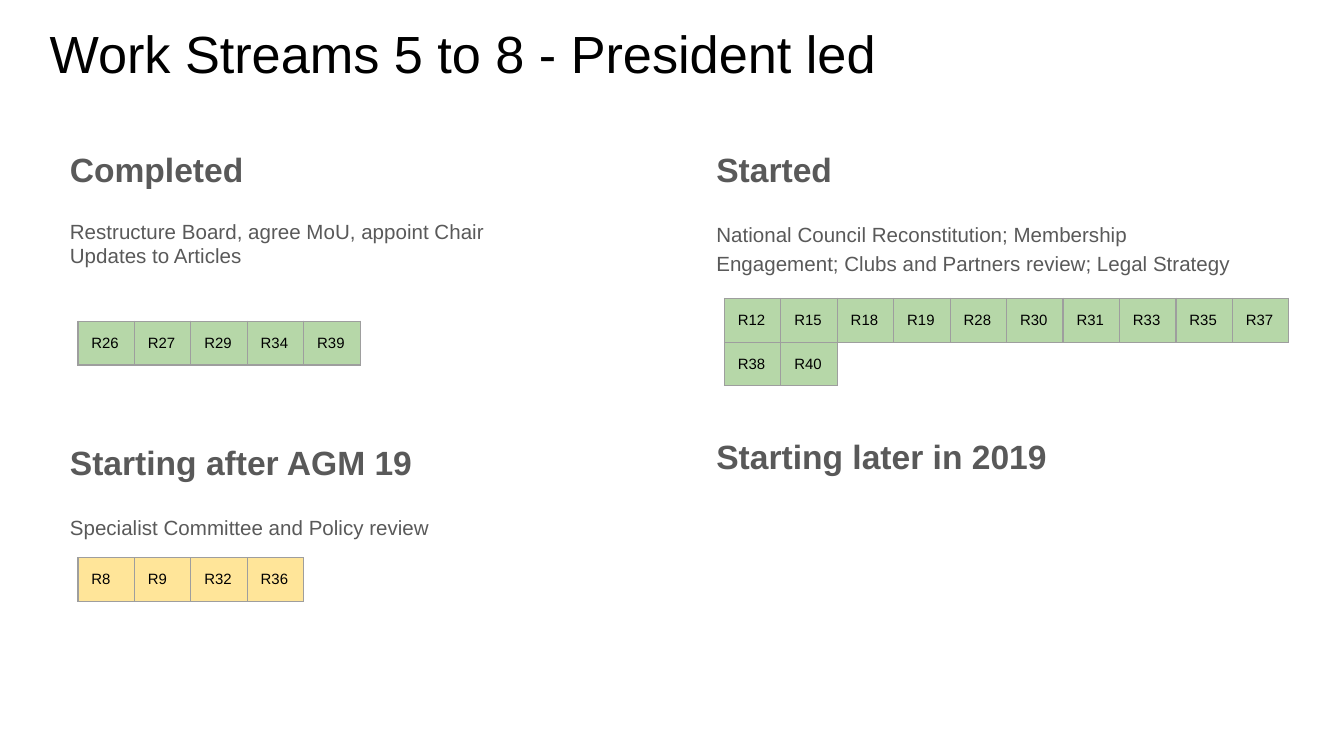
import pptx
import pptx.util
import pptx.dml.color
import pptx.enum.text
import pptx.oxml.ns
from lxml import etree

Inches, Pt = pptx.util.Inches, pptx.util.Pt
TEXT = pptx.enum.text
COLORS = {"black": "000000", "grey": "595959", "line": "9E9E9E",
          "green": "B6D7A8", "yellow": "FFE599"}
FONT = "Arial"
CELL_W, CELL_H = 0.42, 0.31


def rgb(name):
    return pptx.dml.color.RGBColor.from_string(COLORS[name])


def add_run(para, text, size, color, bold=False):
    run = para.add_run()
    run.text = text
    font = run.font
    font.name, font.size, font.bold = FONT, Pt(size), bold
    font.color.rgb = rgb(color)


def place(holder, box):
    """Move a placeholder to box and return its top-anchored text frame."""
    holder.left, holder.top, holder.width, holder.height = map(Inches, box)
    frame = holder.text_frame
    frame.word_wrap = True
    frame.auto_size = TEXT.MSO_AUTO_SIZE.NONE
    frame.vertical_anchor = TEXT.MSO_ANCHOR.TOP
    frame.margin_left = frame.margin_right = Inches(0.1)
    frame.margin_top = frame.margin_bottom = Inches(0.1)
    return frame


def add_title(holder, box, text):
    para = place(holder, box).paragraphs[0]
    para.alignment = TEXT.PP_ALIGN.LEFT
    add_run(para, text, 28, "black")


def add_stream(holder, box, head, lines, spacing):
    """Fill one quadrant with a bold heading and its plain lines."""
    frame = place(holder, box)
    for i, text in enumerate([head] + lines):
        para = frame.paragraphs[0] if i == 0 else frame.add_paragraph()
        props = para._p.get_or_add_pPr()
        props.set("marL", "0")
        props.set("indent", "0")
        etree.SubElement(props, pptx.oxml.ns.qn("a:buNone"))
        para.alignment = TEXT.PP_ALIGN.LEFT
        para.line_spacing = 1.15 if i == 0 else spacing
        para.space_before = Pt(16 if i == 1 else 0)
        para.space_after = Pt(0)
        add_run(para, text, 18 if i == 0 else 11, "grey", i == 0)


def add_border(cell):
    props = cell._tc.get_or_add_tcPr()
    for side in ("a:lnL", "a:lnR", "a:lnT", "a:lnB"):
        line = etree.SubElement(props, pptx.oxml.ns.qn(side), w=str(Pt(0.75)))
        fill = etree.SubElement(line, pptx.oxml.ns.qn("a:solidFill"))
        etree.SubElement(fill, pptx.oxml.ns.qn("a:srgbClr"), val=COLORS["line"])


def add_codes(slide, left, top, groups, color):
    """Set small tables side by side; each group is a list of rows."""
    for group in groups:
        cols = len(group[0])
        width = cols * CELL_W
        table = slide.shapes.add_table(
            len(group), cols, Inches(left), Inches(top),
            Inches(width), Inches(CELL_H * len(group))).table
        table.first_row = table.horz_banding = False
        for r, row in enumerate(group):
            for c, code in enumerate(row):
                cell = table.cell(r, c)
                cell.margin_left = cell.margin_right = Inches(0.1)
                cell.margin_top = cell.margin_bottom = Inches(0.1)
                add_border(cell)
                cell.fill.solid()
                cell.fill.fore_color.rgb = rgb(color)
                add_run(cell.text_frame.paragraphs[0], code, 8, "black")
        left += width


def main():
    deck = pptx.Presentation()
    deck.slide_width = Inches(10)
    deck.slide_height = deck.slide_width * 9 // 16
    slide = deck.slides.add_slide(deck.slide_layouts.get_by_name("Comparison"))
    title, *bodies = slide.placeholders

    add_title(title, (0.27, 0.06, 9.08, 0.63),
              "Work Streams 5 to 8 - President led")
    streams = [
        ((0.42, 0.96, 4.81, 2.46), "Completed",
         ["Restructure Board, agree MoU, appoint Chair",
          "Updates to Articles"], 1.0),
        ((5.23, 0.96, 4.12, 2.17), "Started",
         ["National Council Reconstitution; Membership Engagement; "
          "Clubs and Partners review; Legal Strategy"], 1.15),
        ((0.42, 3.14, 3.71, 2.21), "Starting after AGM 19",
         ["Specialist Committee and Policy review"], 1.15),
        ((5.23, 3.1, 4.12, 2.43), "Starting later in 2019", [], 1.15),
    ]
    for holder, stream in zip(bodies, streams):
        add_stream(holder, *stream)

    add_codes(slide, 0.58, 2.39,
              [[["R26", "R27"]], [["R29", "R34"]], [["R39"]]], "green")
    add_codes(slide, 5.39, 2.22,
              [[["R12", "R15"], ["R38", "R40"]], [["R18", "R19"]],
               [["R28", "R30"]], [["R31", "R33"]], [["R35", "R37"]]], "green")
    add_codes(slide, 0.58, 4.15,
              [[["R8", "R9"]], [["R32", "R36"]]], "yellow")
    deck.save("out.pptx")


if __name__ == "__main__":
    main()
